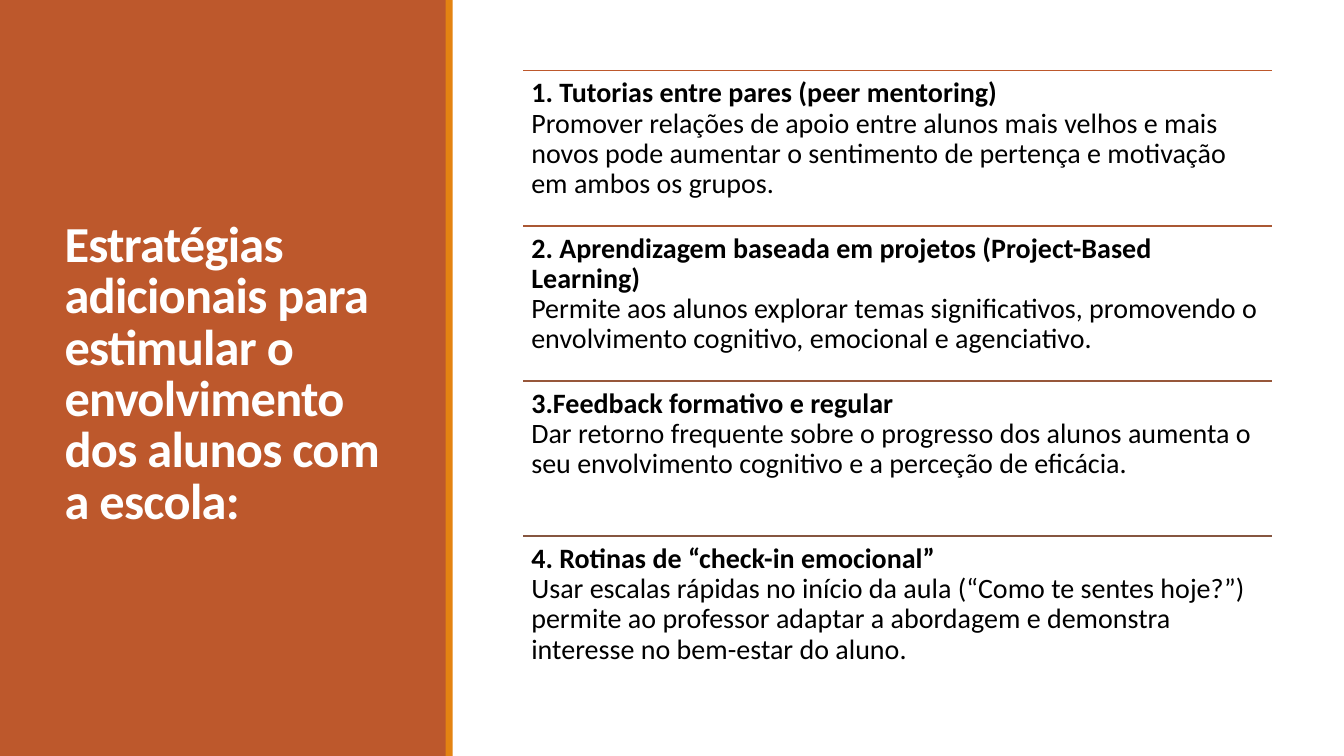
from pptx import Presentation
from pptx import util as u
from pptx.dml.color import RGBColor
from pptx.enum import shapes, text
from pptx.oxml import ns
from lxml import etree

RUST = RGBColor(0xBD, 0x58, 0x2C)
ORANGE = RGBColor(0xE4, 0x83, 0x12)
WHITE = RGBColor(0xFF, 0xFF, 0xFF)
BLACK = RGBColor(0, 0, 0)
RULE_COLORS = [
    RUST,
    RGBColor(0xAA, 0x58, 0x34),
    RGBColor(0x97, 0x57, 0x3A),
    RGBColor(0x86, 0x56, 0x40),
]

TITLE = ("Estratégias adicionais para estimular o envolvimento "
         "dos alunos com a escola:")
STRATEGIES = [
    ("1. Tutorias entre pares (peer mentoring)",
     "Promover relações de apoio entre alunos mais velhos e mais novos pode "
     "aumentar o sentimento de pertença e motivação em ambos os grupos."),
    ("2. Aprendizagem baseada em projetos (Project-Based Learning)",
     "Permite aos alunos explorar temas significativos, promovendo o "
     "envolvimento cognitivo, emocional e agenciativo."),
    ("3.Feedback formativo e regular",
     "Dar retorno frequente sobre o progresso dos alunos aumenta o seu "
     "envolvimento cognitivo e a perceção de eficácia."),
    ("4. Rotinas de “check-in emocional”",
     "Usar escalas rápidas no início da aula (“Como te sentes hoje?”) permite "
     "ao professor adaptar a abordagem e demonstra interesse no bem-estar do aluno."),
]

LIST_LEFT, LIST_TOP, LIST_WIDTH = 5.19, 0.7, 7.43
ROW_HEIGHT = 1.54


def add_panel(slide, left, width, color):
    """Add a coloured band as tall as the slide."""
    panel = slide.shapes.add_shape(
        shapes.MSO_SHAPE.RECTANGLE,
        u.Inches(left), 0, u.Inches(width), u.Inches(7.5))
    panel.shadow.inherit = False
    panel.fill.solid()
    panel.fill.fore_color.rgb = color
    panel.line.fill.background()


def add_text(paragraph, content, *, size, color, bold=False, spacing=None):
    run = paragraph.add_run()
    run.text = content
    run.font.name = "Calibri"
    run.font.size = u.Pt(size)
    run.font.bold = bold
    run.font.color.rgb = color
    if spacing is not None:
        run.font._element.set("spc", str(round(spacing * 100)))


def place_title(slide):
    title = slide.shapes.title
    title.left, title.top = u.Inches(0.54), u.Inches(0.57)
    title.width, title.height = u.Inches(3.37), u.Inches(6.31)
    frame = title.text_frame
    frame.word_wrap = True
    frame.auto_size = text.MSO_AUTO_SIZE.NONE
    frame.vertical_anchor = text.MSO_ANCHOR.MIDDLE
    paragraph = frame.paragraphs[0]
    paragraph.alignment = text.PP_ALIGN.LEFT
    paragraph.line_spacing = 0.85
    add_text(paragraph, TITLE, size=36, color=WHITE, bold=True, spacing=-0.5)
    # Bring the title in front of the panel.
    slide.shapes._spTree.append(title._element)


def add_rule(slide, top, color):
    rule = slide.shapes.add_connector(
        shapes.MSO_CONNECTOR.STRAIGHT,
        u.Inches(LIST_LEFT), u.Inches(top),
        u.Inches(LIST_LEFT + LIST_WIDTH), u.Inches(top))
    rule.line.color.rgb = color
    rule.line.width = u.Pt(1.25)
    etree.SubElement(rule._element.spPr, ns.qn("a:effectLst"))


def add_strategy(slide, top, heading, description):
    box = slide.shapes.add_textbox(
        u.Inches(LIST_LEFT), u.Inches(top),
        u.Inches(LIST_WIDTH), u.Inches(ROW_HEIGHT))
    frame = box.text_frame
    frame.word_wrap = True
    frame.margin_left = frame.margin_right = u.Inches(0.08)
    frame.margin_top = frame.margin_bottom = u.Inches(0.08)
    paragraph = frame.paragraphs[0]
    paragraph.line_spacing = 0.9
    add_text(paragraph, heading, size=20, color=BLACK, bold=True)
    paragraph.add_line_break()
    add_text(paragraph, description, size=20, color=BLACK)


def main():
    presentation = Presentation()
    presentation.slide_width = u.Inches(13.33)
    presentation.slide_height = u.Inches(7.5)
    slide = presentation.slides.add_slide(presentation.slide_layouts[5])

    add_panel(slide, 0, 4.43, RUST)
    place_title(slide)
    add_panel(slide, 4.42, 0.07, ORANGE)
    for row, (strategy, color) in enumerate(zip(STRATEGIES, RULE_COLORS)):
        top = LIST_TOP + row * ROW_HEIGHT
        add_rule(slide, top, color)
        add_strategy(slide, top, *strategy)

    presentation.save("out.pptx")


if __name__ == "__main__":
    main()
